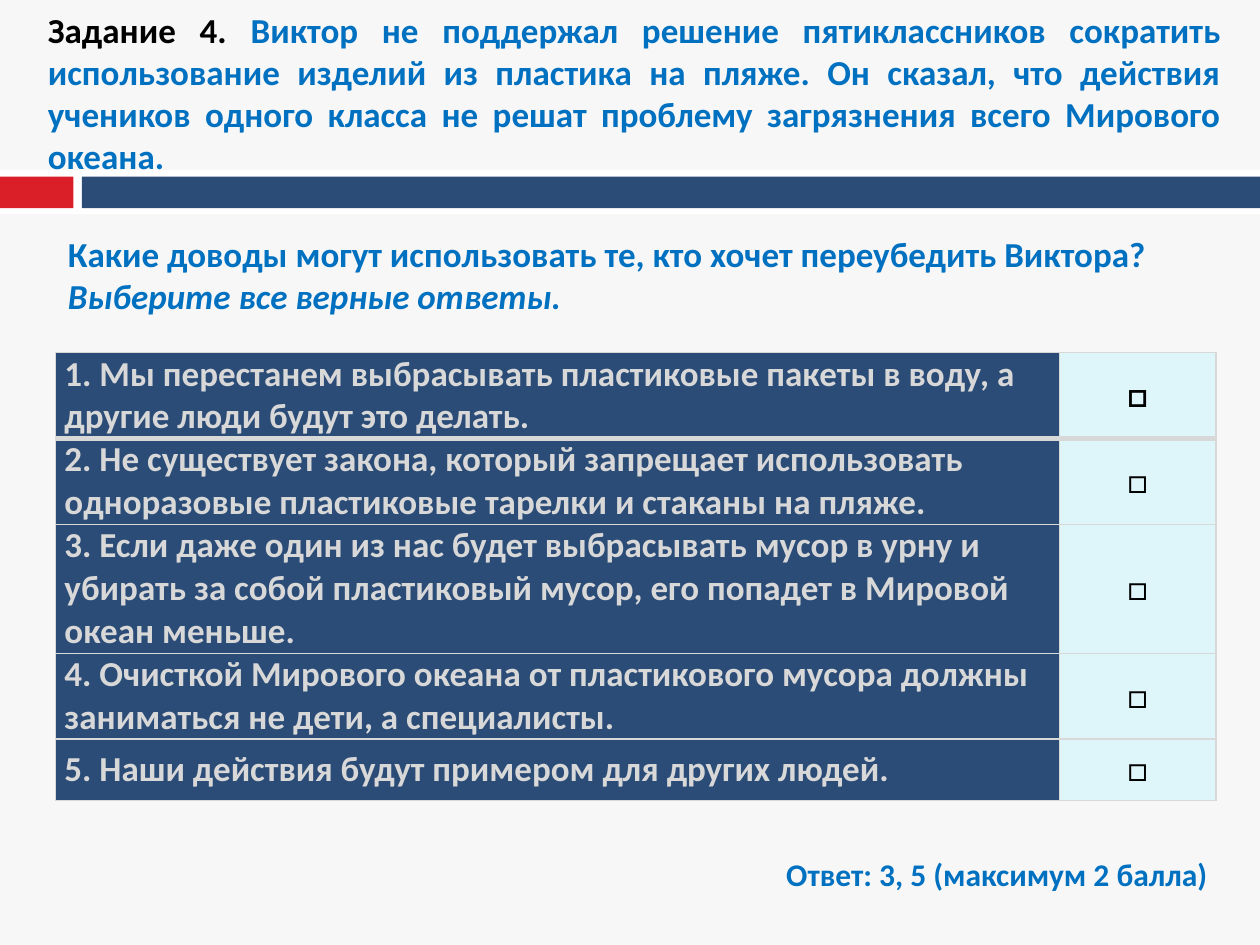
from lxml import etree
from pptx import Presentation
from pptx.dml.color import RGBColor
from pptx.enum.shapes import MSO_SHAPE
from pptx.enum.text import MSO_ANCHOR, MSO_AUTO_SIZE, PP_ALIGN
from pptx.oxml.ns import qn
from pptx.util import Cm, Pt

RECTANGLE = MSO_SHAPE.RECTANGLE
TOP, MIDDLE = MSO_ANCHOR.TOP, MSO_ANCHOR.MIDDLE
LEFT, CENTER, JUSTIFY = PP_ALIGN.LEFT, PP_ALIGN.CENTER, PP_ALIGN.JUSTIFY
FIT_SHAPE, NO_FIT = MSO_AUTO_SIZE.SHAPE_TO_FIT_TEXT, MSO_AUTO_SIZE.NONE

NAVY, RED, WHITE, BLACK = "2B4C77", "DA1F28", "FFFFFF", "000000"
BLUE, GREY, PALE, PAPER = "0070C0", "D8D8D8", "DEF5FA", "F7F7F7"


def rgb(hex_color):
    return RGBColor.from_string(hex_color)


def style(run, color, size=20, bold=True, italic=False):
    run.font.name = "Calibri"
    run.font.size = Pt(size)
    run.font.bold = bold
    run.font.italic = italic
    run.font.color.rgb = rgb(color)


prs = Presentation()
prs.slide_width, prs.slide_height = Cm(25.4), Cm(19.05)
slide = prs.slides.add_slide(prs.slide_layouts[5])
slide.background.fill.solid()
slide.background.fill.fore_color.rgb = rgb(PAPER)

bands = [
    (0, 3.43, 25.4, 0.89, WHITE),
    (0, 3.56, 1.48, 0.64, RED),
    (1.65, 3.56, 23.75, 0.64, NAVY),
]
for left, top, width, height, color in bands:
    band = slide.shapes.add_shape(RECTANGLE, Cm(left), Cm(top), Cm(width), Cm(height))
    band.shadow.inherit = False
    band.fill.solid()
    band.fill.fore_color.rgb = rgb(color)
    band.line.fill.background()

task = slide.shapes.title
slide.shapes.element.append(task.element)
task.left, task.top, task.width, task.height = Cm(0.71), Cm(0.05), Cm(24.16), Cm(3.68)
task.text_frame.word_wrap = True
task.text_frame.auto_size = NO_FIT
task.text_frame.vertical_anchor = TOP
task_paragraph = task.text_frame.paragraphs[0]
task_paragraph.alignment = JUSTIFY
task_parts = [
    ("Задание 4. ", BLACK),
    ("Виктор не поддержал решение пятиклассников сократить использование изделий "
     "из пластика на пляже. Он сказал, что действия учеников одного класса не решат "
     "проблему загрязнения всего Мирового океана.", BLUE),
]
for text, color in task_parts:
    part = task_paragraph.add_run()
    part.text = text
    style(part, color)

question = slide.shapes.add_textbox(Cm(1.12), Cm(4.57), Cm(23.39), Cm(1.96))
question.text_frame.word_wrap = True
question.text_frame.auto_size = FIT_SHAPE
question.text_frame.text = (
    "Какие доводы могут использовать те, кто хочет переубедить Виктора?\n"
    "Выберите все верные ответы."
)
prompt, instruction = question.text_frame.paragraphs
style(prompt.runs[0], BLUE)
style(instruction.runs[0], BLUE, italic=True)

arguments = [
    ("1. Мы перестанем выбрасывать пластиковые пакеты в воду, а другие люди будут это делать.", 1.73),
    ("2. Не существует закона, который запрещает использовать одноразовые пластиковые "
     "тарелки и стаканы на пляже.", 1.73),
    ("3. Если даже один из нас будет выбрасывать мусор в урну и убирать за собой "
     "пластиковый мусор, его попадет в Мировой океан меньше.", 2.6),
    ("4. Очисткой Мирового океана от пластикового мусора должны заниматься не дети, "
     "а специалисты.", 1.73),
    ("5. Наши действия будут примером для других людей.", 1.24),
]
choices = slide.shapes.add_table(
    len(arguments), 2, Cm(1.12), Cm(7.11), Cm(23.39), Cm(9.03)
).table
choices.columns[0].width, choices.columns[1].width = Cm(20.24), Cm(3.15)

for row, (argument, height) in enumerate(arguments):
    choices.rows[row].height = Cm(height)
    columns = [
        (argument, NAVY, GREY, LEFT, True),
        ("□", PALE, BLACK, CENTER, row == 0),
    ]
    for column, (text, fill, color, alignment, bold) in enumerate(columns):
        cell = choices.cell(row, column)
        cell.text_frame.text = text
        cell.vertical_anchor = MIDDLE
        cell.margin_left = cell.margin_right = Cm(0.18)
        cell.margin_top = cell.margin_bottom = 0
        cell.text_frame.paragraphs[0].alignment = alignment
        style(cell.text_frame.paragraphs[0].runs[0], color, bold=bold)
        properties = cell._tc.get_or_add_tcPr()
        for side in ("L", "R", "T", "B"):
            thick = (row, side) in ((0, "B"), (1, "T"))
            border = etree.SubElement(properties, qn(f"a:ln{side}"), w=str(Pt(3 if thick else 1)))
            solid = etree.SubElement(border, qn("a:solidFill"))
            etree.SubElement(solid, qn("a:srgbClr"), val=GREY)
        cell.fill.solid()
        cell.fill.fore_color.rgb = rgb(fill)

answer = slide.shapes.add_textbox(Cm(15.6), Cm(17.12), Cm(9.09), Cm(1.02))
answer.text_frame.word_wrap = False
answer.text_frame.auto_size = FIT_SHAPE
answer.text_frame.text = "Ответ: 3, 5 (максимум 2 балла)"
style(answer.text_frame.paragraphs[0].runs[0], BLUE, size=18)

prs.save("out.pptx")
